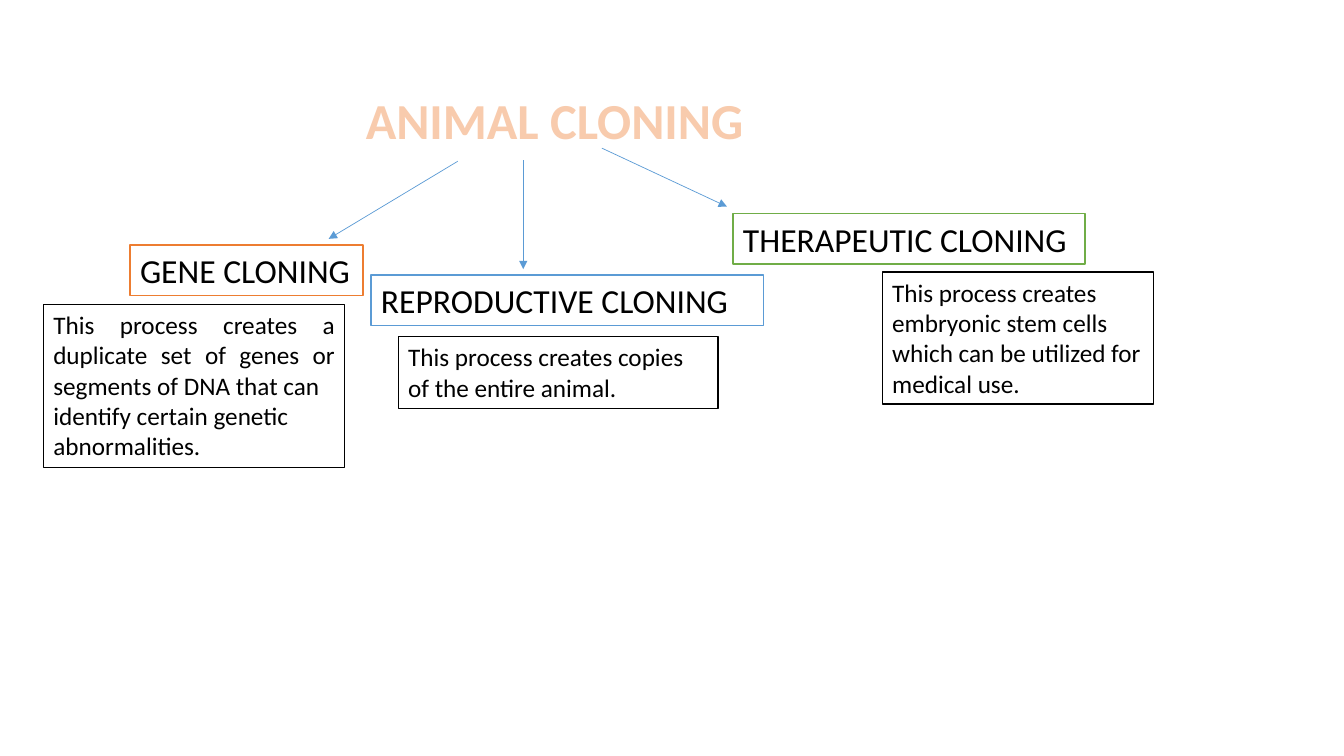
import pptx
import pptx.dml.color
import pptx.enum.shapes
import pptx.enum.text
import pptx.oxml
import pptx.oxml.ns
import pptx.util
from pptx.util import Inches

RGBColor = pptx.dml.color.RGBColor
WHITE = RGBColor(0xFF, 0xFF, 0xFF)
BLACK = RGBColor(0x00, 0x00, 0x00)
PEACH = RGBColor(0xF8, 0xCB, 0xAD)
ORANGE = RGBColor(0xED, 0x7D, 0x31)
BLUE = RGBColor(0x5B, 0x9B, 0xD5)
GREEN = RGBColor(0x70, 0xAD, 0x47)

ALIGN = pptx.enum.text.PP_ALIGN
HEADING_SIZE = 24
BODY_SIZE = 18

ARROWS = [
    (4.54, 1.6, 3.26, 2.37),
    (5.19, 1.59, 5.19, 2.67),
    (5.97, 1.47, 7.21, 2.05),
]
HEADINGS = [
    ("GENE CLONING", (1.29, 2.43, 2.31, 0.5), ORANGE),
    ("REPRODUCTIVE CLONING", (3.68, 2.73, 3.89, 0.5), BLUE),
    ("THERAPEUTIC CLONING", (7.27, 2.12, 3.49, 0.5), GREEN),
]
DESCRIPTIONS = [
    ([("This process creates a duplicate set of genes or segments of DNA that can", ALIGN.JUSTIFY),
      ("identify certain genetic abnormalities.", ALIGN.LEFT)],
     (0.43, 3.02, 2.99, 1.62)),
    ([("This process creates copies of the entire animal.", ALIGN.LEFT)],
     (3.95, 3.34, 3.17, 0.71)),
    ([("This process creates embryonic stem cells which can be utilized for", ALIGN.LEFT),
      ("medical use.", ALIGN.LEFT)],
     (8.75, 2.7, 2.69, 1.31)),
]


def write_paragraph(paragraph, text, size, color, alignment=ALIGN.LEFT):
    """Fill a paragraph with text in one font."""
    paragraph.text = text
    paragraph.alignment = alignment
    paragraph.font.name = "Calibri"
    paragraph.font.size = pptx.util.Pt(size)
    paragraph.font.color.rgb = color


def add_title(slide, text, box):
    """Add the bold title with outlined letters."""
    shape = slide.shapes.add_textbox(*map(Inches, box))
    frame = shape.text_frame
    frame.word_wrap = False
    frame.auto_size = pptx.enum.text.MSO_AUTO_SIZE.SHAPE_TO_FIT_TEXT
    paragraph = frame.paragraphs[0]
    write_paragraph(paragraph, text, 36, PEACH)
    paragraph.font.bold = True
    outline = pptx.oxml.parse_xml(
        f'<a:ln {pptx.oxml.ns.nsdecls("a")} w="{pptx.util.Pt(1.75)}">'
        f'<a:solidFill><a:srgbClr val="{ORANGE}"/></a:solidFill></a:ln>'
    )
    properties = paragraph._p.find(".//" + pptx.oxml.ns.qn("a:defRPr"))
    properties.insert(0, outline)


def add_arrow(slide, points):
    """Add a thin arrow from the title to a heading."""
    connector = slide.shapes.add_connector(
        pptx.enum.shapes.MSO_CONNECTOR.STRAIGHT, *map(Inches, points))
    connector.line.color.rgb = BLUE
    connector.line.width = pptx.util.Pt(0.5)
    line = connector.line._get_or_add_ln()
    line.append(pptx.oxml.parse_xml(
        f'<a:tailEnd {pptx.oxml.ns.nsdecls("a")} type="triangle"/>'))
    connector._element.spPr.append(pptx.oxml.parse_xml(
        f'<a:effectLst {pptx.oxml.ns.nsdecls("a")}/>'))


def add_box(slide, paragraphs, box, size, line_color):
    """Add a white bordered box holding aligned paragraphs."""
    shape = slide.shapes.add_shape(
        pptx.enum.shapes.MSO_SHAPE.RECTANGLE, *map(Inches, box))
    shape.shadow.inherit = False
    shape.fill.solid()
    shape.fill.fore_color.rgb = WHITE
    shape.line.color.rgb = line_color
    shape.line.width = pptx.util.Pt(1)
    frame = shape.text_frame
    frame.word_wrap = True
    frame.auto_size = pptx.enum.text.MSO_AUTO_SIZE.SHAPE_TO_FIT_TEXT
    frame.vertical_anchor = pptx.enum.text.MSO_ANCHOR.TOP
    for index, (text, alignment) in enumerate(paragraphs):
        paragraph = frame.add_paragraph() if index else frame.paragraphs[0]
        write_paragraph(paragraph, text, size, BLACK, alignment)


def main():
    """Build the animal cloning slide."""
    presentation = pptx.Presentation()
    presentation.slide_width = Inches(13.33)
    presentation.slide_height = Inches(7.5)
    slide = presentation.slides.add_slide(presentation.slide_layouts[6])
    add_title(slide, "ANIMAL CLONING", (3.53, 0.83, 3.96, 0.71))
    for points in ARROWS:
        add_arrow(slide, points)
    for text, box, color in HEADINGS:
        add_box(slide, [(text, ALIGN.LEFT)], box, HEADING_SIZE, color)
    for paragraphs, box in DESCRIPTIONS:
        add_box(slide, paragraphs, box, BODY_SIZE, BLACK)
    presentation.save("out.pptx")


if __name__ == "__main__":
    main()
